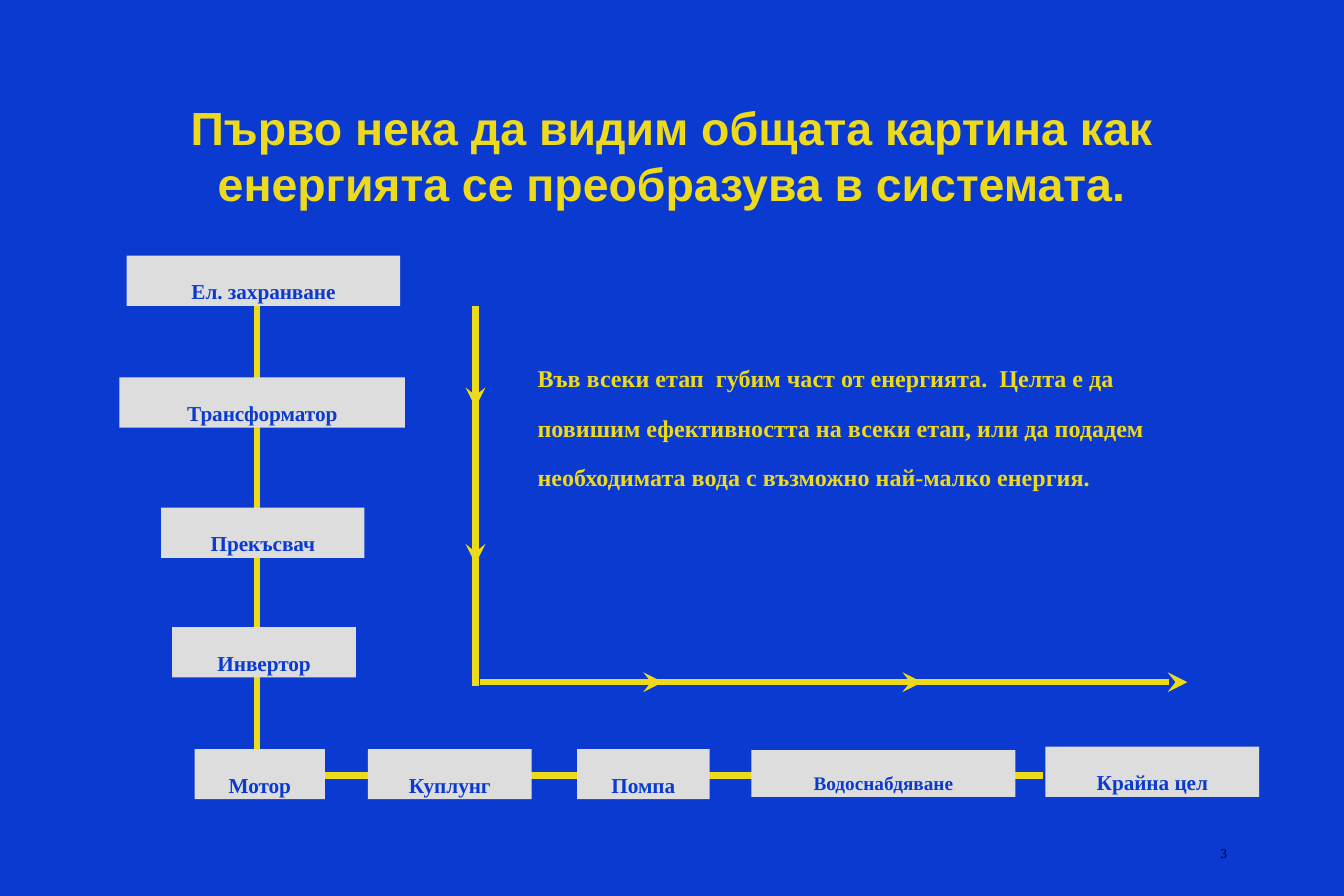
"""Build the slide on how energy is converted along a pumping system."""
from lxml import etree
from pptx import Presentation
from pptx.dml.color import RGBColor
from pptx.enum.shapes import MSO_CONNECTOR, MSO_SHAPE
from pptx.enum.text import MSO_ANCHOR, PP_ALIGN
from pptx.oxml.ns import qn
from pptx.util import Inches, Pt

STRAIGHT = MSO_CONNECTOR.STRAIGHT
RECTANGLE = MSO_SHAPE.RECTANGLE
TOP, MIDDLE = MSO_ANCHOR.TOP, MSO_ANCHOR.MIDDLE
LEFT, CENTER, RIGHT = PP_ALIGN.LEFT, PP_ALIGN.CENTER, PP_ALIGN.RIGHT
BLUE, YELLOW, GREY, BLACK = "0B3AD1", "EEDA1C", "DDDDDD", "000000"
SERIF = "Times New Roman"


def color(value):
    """Turn a hex string into a colour."""
    return RGBColor.from_string(value)


def write(box, text, size, ink, align, anchor=TOP, font=SERIF, bold=True,
          lowered=True, spacing=0.9, insets=(0.09, 0.02)):
    """Put one styled paragraph into a box."""
    frame = box.text_frame
    frame.word_wrap = True
    frame.vertical_anchor = anchor
    frame.margin_left = frame.margin_right = Inches(insets[0])
    frame.margin_top = frame.margin_bottom = Inches(insets[1])
    para = frame.paragraphs[0]
    para.alignment = align
    para.line_spacing = spacing
    para.font.name = font
    para.font.size = Pt(size)
    para.font.bold = bold
    para.font.color.rgb = color(ink)
    span = para.add_run()
    span.text = text
    if lowered:
        span._r.get_or_add_rPr().set("baseline", "-20000")


deck = Presentation()
deck.slide_width, deck.slide_height = Inches(11.25), Inches(7.5)
page = deck.slides.add_slide(deck.slide_layouts[6])
page.background.fill.solid()
page.background.fill.fore_color.rgb = color(BLUE)

number = page.shapes.add_textbox(Inches(8.04), Inches(6.83), Inches(2.33), Inches(0.5))
write(number, "3", 14, BLACK, RIGHT, MIDDLE, bold=False, spacing=1, insets=(0.1, 0.05))

title = page.shapes.add_textbox(Inches(0.84), Inches(0.67), Inches(9.56), Inches(1.25))
write(title, "Първо нека да видим общата картина как енергията се преобразува в системата.",
      28, YELLOW, CENTER, MIDDLE, font="Arial", lowered=False, spacing=1, insets=(0.1, 0.05))

flow_x, flow_y = 3.98, 5.71
lines = [
    (2.17, 6.49, 8.73, 6.49, False),
    (2.15, 2.5, 2.15, 6.53, False),
    (flow_x, 2.64, flow_x, 5.74, False),
    (flow_x, 2.58, flow_x, 4.72, True),
    (flow_x, 2.56, flow_x, 3.41, True),
    (4.04, flow_y, 9.94, flow_y, True),
    (4.19, flow_y, 7.72, flow_y, True),
    (4.02, flow_y, 5.55, flow_y, True),
]
for start_x, start_y, end_x, end_y, arrow in lines:
    line = page.shapes.add_connector(STRAIGHT, Inches(start_x), Inches(start_y),
                                     Inches(end_x), Inches(end_y))
    line.line.color.rgb = color(YELLOW)
    line.line.width = Pt(4)
    if arrow:
        etree.SubElement(line.line._get_or_add_ln(), qn("a:tailEnd"), type="stealth")
    etree.SubElement(line._element.spPr, qn("a:effectLst"))

stages = [
    ("Ел. захранване", 1.06, 2.14, 2.29, 0.42, 22),
    ("Трансформатор", 1, 3.16, 2.39, 0.42, 22),
    ("Прекъсвач", 1.35, 4.25, 1.7, 0.42, 22),
    ("Инвертор", 1.44, 5.25, 1.54, 0.42, 22),
    ("Мотор", 1.63, 6.27, 1.09, 0.42, 22),
    ("Куплунг", 3.08, 6.27, 1.37, 0.42, 22),
    ("Помпа", 4.83, 6.27, 1.11, 0.42, 22),
    ("Водоснабдяване", 6.29, 6.28, 2.21, 0.39, 20),
    ("Крайна цел", 8.75, 6.25, 1.79, 0.42, 22),
]
for name, left, top, width, height, size in stages:
    stage = page.shapes.add_shape(RECTANGLE, Inches(left), Inches(top),
                                  Inches(width), Inches(height))
    stage.shadow.inherit = False
    stage.fill.solid()
    stage.fill.fore_color.rgb = color(GREY)
    stage.line.fill.background()
    write(stage, name, size, BLUE, CENTER)

message = page.shapes.add_textbox(Inches(4.41), Inches(2.83), Inches(5.59), Inches(1.96))
write(message, "Във всеки етап  губим част от енергията.  Целта е да повишим ефективността "
      "на всеки етап, или да подадем необходимата вода с възможно най-малко енергия.",
      25, YELLOW, LEFT)

deck.save("out.pptx")
